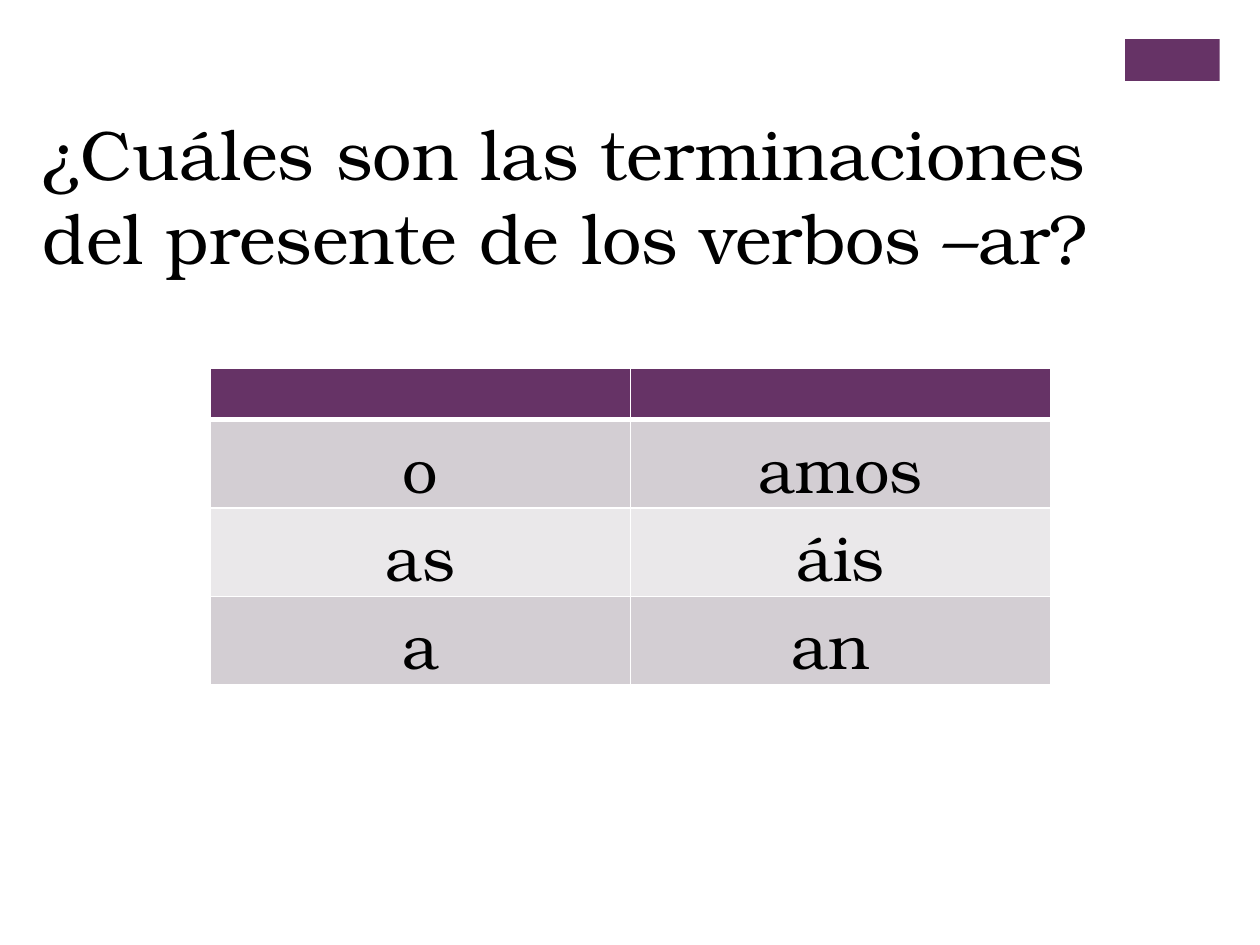
from lxml import etree
from pptx import Presentation
from pptx.dml.color import RGBColor
from pptx.enum.shapes import MSO_SHAPE
from pptx.enum.text import MSO_ANCHOR, MSO_AUTO_SIZE, PP_ALIGN
from pptx.oxml.ns import qn
from pptx.util import Cm, Pt

RECTANGLE = MSO_SHAPE.RECTANGLE
TOP = MSO_ANCHOR.TOP
GROW = MSO_AUTO_SIZE.SHAPE_TO_FIT_TEXT
LEFT, CENTER = PP_ALIGN.LEFT, PP_ALIGN.CENTER

PURPLE, BLACK, WHITE = "663366", "000000", "FFFFFF"
BANDS = ["D3CED3", "EAE8EA"]
TITLE_ONLY = 5


def color(value):
    return RGBColor.from_string(value)


def write(paragraph, text, size, alignment):
    paragraph.alignment = alignment
    run = paragraph.add_run()
    run.text = text
    font_format = {"name": "TeX Gyre Bonum", "size": Pt(size)}
    for key, value in font_format.items():
        setattr(run.font, key, value)
    run.font.color.rgb = color(BLACK)


prs = Presentation()
prs.slide_width, prs.slide_height = Cm(25.4), Cm(19.05)
slide = prs.slides.add_slide(prs.slide_layouts[TITLE_ONLY])

# Question
question = slide.shapes.title
question_place = {"left": Cm(0.61), "top": Cm(2.11),
                  "width": Cm(23.95), "height": Cm(3.68)}
for key, value in question_place.items():
    setattr(question, key, value)
frame_format = {"word_wrap": True, "auto_size": GROW, "vertical_anchor": TOP}
for key, value in frame_format.items():
    setattr(question.text_frame, key, value)
write(question.text_frame.paragraphs[0],
      "¿Cuáles son las terminaciones del presente de los verbos –ar?", 40, LEFT)

# Corner accent
accent = slide.shapes.add_shape(RECTANGLE, Cm(22.68), Cm(0.79), Cm(1.91), Cm(0.84))
accent.shadow.inherit = False
accent.fill.solid()
accent.fill.fore_color.rgb = color(PURPLE)
accent.line.fill.background()

# Verb endings: an empty header above singular and plural
endings = [("", ""), ("o", "amos"), ("as", "áis"), ("a", "an ")]
table = slide.shapes.add_table(len(endings), 2, Cm(4.24), Cm(7.42),
                               Cm(16.94), Cm(6.38)).table
for column in table.columns:
    column.width = Cm(8.47)

for r, row_endings in enumerate(endings):
    table.rows[r].height = Cm(1.78 if r else 1.04)
    for c, ending in enumerate(row_endings):
        cell = table.cell(r, c)

        # White grid, with a heavier rule under the header
        borders = {"a:lnL": 1, "a:lnR": 1,
                   "a:lnT": 3 if r == 1 else 1,
                   "a:lnB": 3 if r == 0 else 1}
        properties = cell._tc.get_or_add_tcPr()
        for side, width in borders.items():
            line = etree.SubElement(properties, qn(side), w=str(Pt(width)))
            solid = etree.SubElement(line, qn("a:solidFill"))
            etree.SubElement(solid, qn("a:srgbClr"), val=WHITE)

        cell.fill.solid()
        cell.fill.fore_color.rgb = color(BANDS[(r - 1) % 2] if r else PURPLE)
        if ending:
            write(cell.text_frame.paragraphs[0], ending, 36, CENTER)

prs.save("out.pptx")
